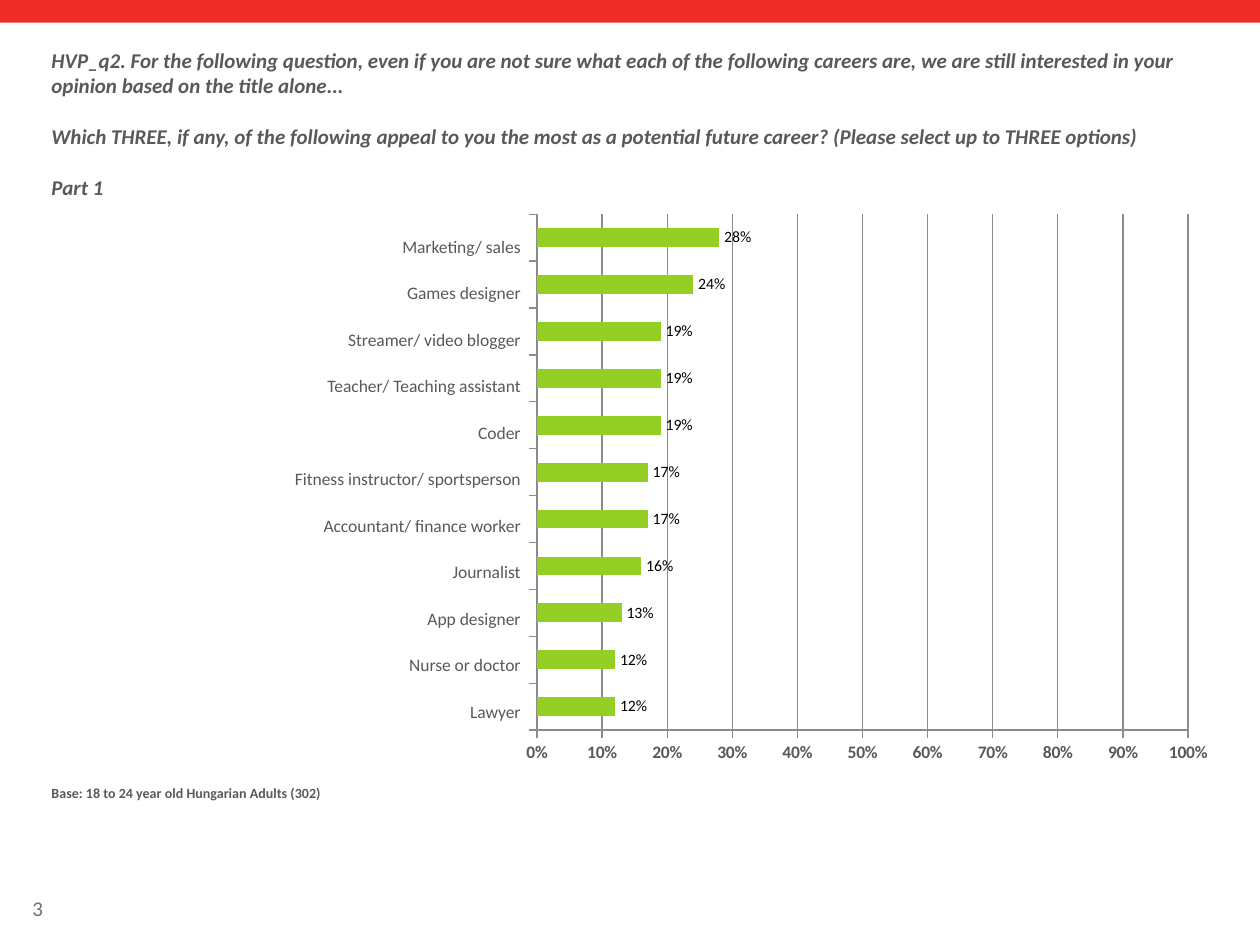
"""Build the career appeal survey slide with its bar chart."""
import pptx
import pptx.chart.data
import pptx.dml.color
import pptx.enum.chart
import pptx.enum.shapes
import pptx.enum.text
import pptx.oxml
import pptx.oxml.ns
import pptx.util

Inches = pptx.util.Inches
Pt = pptx.util.Pt
RGBColor = pptx.dml.color.RGBColor
Align = pptx.enum.text.PP_ALIGN
Anchor = pptx.enum.text.MSO_ANCHOR
Enum = pptx.enum.chart

RED = RGBColor(0xEE, 0x2D, 0x27)
GREEN = RGBColor(0x93, 0xD0, 0x23)
DARK = RGBColor(0x59, 0x59, 0x59)
GREY = RGBColor(0x6D, 0x6F, 0x71)
LINE = RGBColor(0x8C, 0x8C, 0x8C)
BLACK = RGBColor(0, 0, 0)

JOBS = [
    ("Marketing/ sales", 0.28),
    ("Games designer", 0.24),
    ("Streamer/ video blogger", 0.19),
    ("Teacher/ Teaching assistant", 0.19),
    ("Coder", 0.19),
    ("Fitness instructor/ sportsperson", 0.17),
    ("Accountant/ finance worker", 0.17),
    ("Journalist", 0.16),
    ("App designer", 0.13),
    ("Nurse or doctor", 0.12),
    ("Lawyer", 0.12),
]
ASK = [
    "HVP_q2. For the following question, even if you are not sure what each of the "
    "following careers are, we are still interested in your opinion based on the title alone...",
    "Which THREE, if any, of the following appeal to you the most as a potential future "
    "career? (Please select up to THREE options)",
    "Part 1",
]


def style(font, size, color, bold=False, name="Calibri"):
    font.name = name
    font.size = Pt(size)
    font.bold = bold
    font.color.rgb = color


def write(left, top, width, height, lines, size, color=DARK, bold=False,
          slant=False, align=Align.LEFT, anchor=Anchor.TOP, gap=0):
    box = slide.shapes.add_textbox(Inches(left), Inches(top), Inches(width), Inches(height))
    frame = box.text_frame
    frame.word_wrap = True
    frame.vertical_anchor = anchor
    for i, line in enumerate(lines):
        para = frame.paragraphs[0] if i == 0 else frame.add_paragraph()
        para.alignment = align
        if i:
            para.space_before = Pt(gap)
        run = para.add_run()
        run.text = line
        style(run.font, size, color, bold)
        run.font.italic = slant


deck = pptx.Presentation()
deck.slide_width = Inches(10)
deck.slide_height = Inches(7.5)
slide = deck.slides.add_slide(deck.slide_layouts[6])

band = slide.shapes.add_shape(
    pptx.enum.shapes.MSO_SHAPE.RECTANGLE, 0, 0, Inches(10), Inches(0.18))
band.shadow.inherit = False
band.fill.solid()
band.fill.fore_color.rgb = RED
band.line.fill.background()

write(0.16, 7.06, 0.77, 0.3, ["3"], 12, GREY, anchor=Anchor.MIDDLE)
write(0.31, 0.33, 9.39, 1.28, ASK, 12, bold=True, slant=True, gap=14.6)

data = pptx.chart.data.CategoryChartData(number_format="0%")
data.categories = [str(n) for n in range(1, len(JOBS) + 1)]
data.add_series("Series 1", [share for job, share in reversed(JOBS)])
chart = slide.shapes.add_chart(
    Enum.XL_CHART_TYPE.BAR_CLUSTERED, Inches(4.07), Inches(1.61),
    Inches(5.63), Inches(4.53), data).chart
chart.has_legend = False
chart.has_title = False
style(chart.font, 18, GREY, name="Manrope")

plot = chart.plots[0]
plot.gap_width = 150
plot.overlap = -10
plot.vary_by_categories = False
bars = plot.series[0]
bars.format.fill.solid()
bars.format.fill.fore_color.rgb = GREEN
bars.invert_if_negative = False

plot.has_data_labels = True
labels = plot.data_labels
labels.show_value = True
labels.position = Enum.XL_LABEL_POSITION.OUTSIDE_END
labels.number_format = "0%"
labels.number_format_is_linked = False
style(labels.font, 9, BLACK)

cats, vals = chart.category_axis, chart.value_axis
for axis, bold in ((cats, False), (vals, True)):
    axis.major_tick_mark = Enum.XL_TICK_MARK.OUTSIDE
    axis.minor_tick_mark = Enum.XL_TICK_MARK.NONE
    axis.format.line.color.rgb = LINE
    axis.format.line.width = Pt(0.75)
    style(axis.tick_labels.font, 10, DARK, bold)
cats.tick_label_position = Enum.XL_TICK_LABEL_POSITION.NONE
cats.has_major_gridlines = False
vals.tick_label_position = Enum.XL_TICK_LABEL_POSITION.LOW
vals.minimum_scale = 0
vals.maximum_scale = 1
vals.major_unit = 0.1
vals.tick_labels.number_format = "0%"
vals.tick_labels.number_format_is_linked = False
vals.has_major_gridlines = True
vals.major_gridlines.format.line.color.rgb = LINE
vals.major_gridlines.format.line.width = Pt(0.75)

qn = pptx.oxml.ns.qn
area = chart.element.find(".//" + qn("c:plotArea"))
for old in area.findall(qn("c:layout")):
    area.remove(old)
parts = [("layoutTarget", "inner"), ("xMode", "edge"), ("yMode", "edge"),
         ("x", 0.034), ("y", 0.02), ("w", 0.918), ("h", 0.904)]
inner = "".join(f'<c:{tag} val="{val}"/>' for tag, val in parts)
area.insert(0, pptx.oxml.parse_xml(
    f'<c:layout {pptx.oxml.ns.nsdecls("c")}><c:manualLayout>{inner}'
    "</c:manualLayout></c:layout>"))

for i, (job, share) in enumerate(JOBS):
    write(0.16, 1.77 + 0.369 * i, 4.07, 0.37, [job], 10,
          align=Align.RIGHT, anchor=Anchor.MIDDLE)

write(0.31, 6.18, 9.39, 0.43, ["Base: 18 to 24 year old Hungarian Adults (302)"], 8, bold=True)

deck.save("out.pptx")
